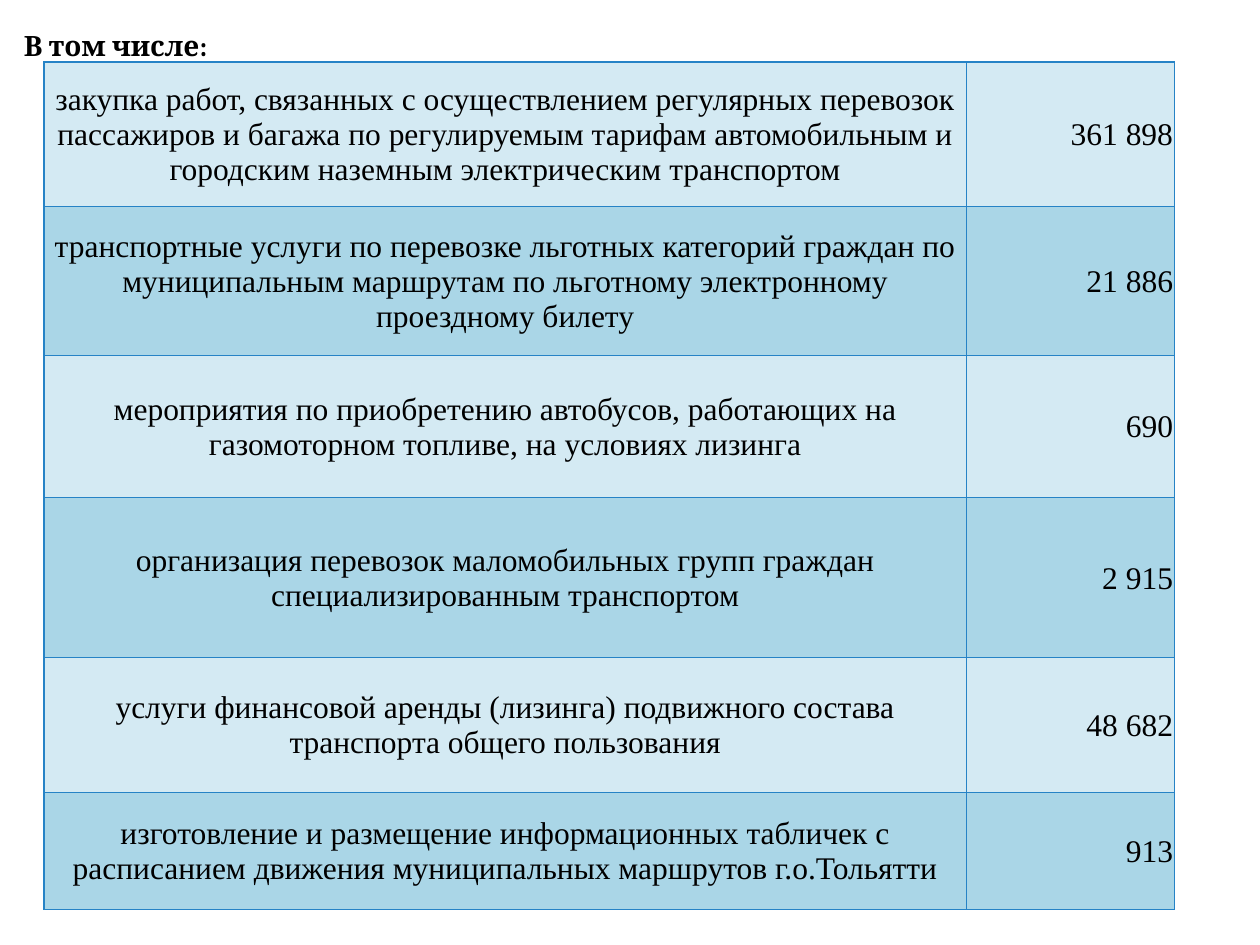
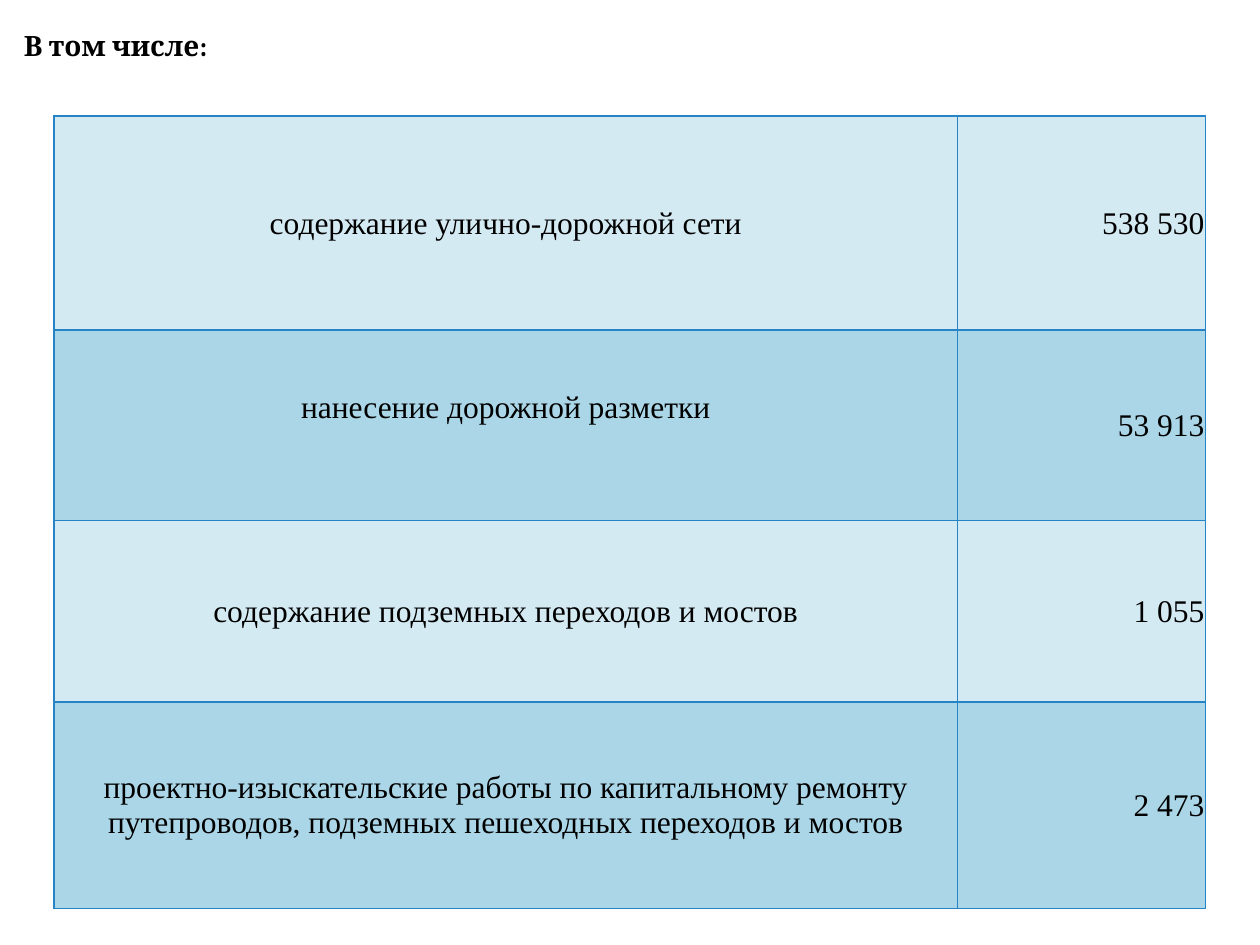
from lxml import etree
from pptx import Presentation
from pptx.dml.color import RGBColor
from pptx.enum import text
from pptx.oxml import ns
from pptx.util import Inches, Pt

BLACK = RGBColor(0x00, 0x00, 0x00)
BORDER = RGBColor(0x26, 0x83, 0xC6)
BANDS = (RGBColor(0xD4, 0xEA, 0xF3), RGBColor(0xAA, 0xD6, 0xE7))
HEADING = "В том числе:"
HEADING_FONT, BODY_FONT = "Cambria", "Times New Roman"
INSET = 0.01
ALIGNS = (text.PP_ALIGN.CENTER, text.PP_ALIGN.RIGHT)

# Each row: height, item, amount, extra space below the item
TABLES = [
    dict(left=0.35, top=0.49, cols=(7.32, 1.65), rows=[
        (1.15, "закупка работ, связанных с осуществлением регулярных перевозок "
               "пассажиров и багажа по регулируемым тарифам автомобильным и "
               "городским наземным электрическим транспортом", "361 898", 0),
        (1.18, "транспортные услуги по перевозке льготных категорий граждан по "
               "муниципальным маршрутам по льготному электронному "
               "проездному билету", "21 886", 0),
        (1.13, "мероприятия по приобретению автобусов, работающих на "
               "газомоторном топливе, на условиях лизинга", "690", 0),
        (1.27, "организация перевозок маломобильных групп граждан "
               "специализированным транспортом", "2 915", 0),
        (1.07, "услуги финансовой аренды (лизинга) подвижного состава "
               "транспорта общего пользования", "48 682", 0),
        (0.93, "изготовление и размещение информационных табличек с "
               "расписанием движения муниципальных маршрутов г.о.Тольятти",
         "913", 0),
    ]),
    dict(left=0.43, top=0.92, cols=(7.17, 1.97), rows=[
        (1.7, "содержание улично-дорожной сети", "538 530", 0),
        (1.51, "нанесение дорожной разметки", "53 913", 0.28),
        (1.44, "содержание подземных переходов и мостов", "1 055", 0),
        (1.64, "проектно-изыскательские работы по капитальному ремонту "
               "путепроводов, подземных пешеходных переходов и мостов",
         "2 473", 0),
    ]),
]


def add_text(p, words, font, size, bold=False):
    r = p.add_run()
    r.text = words
    r.font.name, r.font.size, r.font.bold = font, Pt(size), bold
    r.font.color.rgb = BLACK


def add_borders(cell):
    tc_pr = cell._tc.get_or_add_tcPr()
    for side in ("lnL", "lnR", "lnT", "lnB"):
        ln = etree.SubElement(tc_pr, ns.qn("a:" + side), w=str(Pt(1)))
        fill = etree.SubElement(ln, ns.qn("a:solidFill"))
        etree.SubElement(fill, ns.qn("a:srgbClr"), val=str(BORDER))


prs = Presentation()
prs.slide_width, prs.slide_height = Inches(10), Inches(7.5)

for spec_table in TABLES:
    slide = prs.slides.add_slide(prs.slide_layouts[6])

    heading = slide.shapes.add_textbox(0, Inches(0.21), prs.slide_width, Inches(0.55))
    tf = heading.text_frame
    tf.word_wrap = True
    tf.margin_left = Inches(0.19)
    tf.paragraphs[0].line_spacing = 0.9
    add_text(tf.paragraphs[0], HEADING, HEADING_FONT, 16, bold=True)

    cols, rows = spec_table["cols"], spec_table["rows"]
    table = slide.shapes.add_table(
        len(rows), len(cols), Inches(spec_table["left"]), Inches(spec_table["top"]),
        Inches(sum(cols)), Inches(sum(row[0] for row in rows))).table
    table.first_row = table.horz_banding = False
    for column, width in zip(table.columns, cols):
        column.width = Inches(width)

    for i, (height, item, amount, space_below) in enumerate(rows):
        table.rows[i].height = Inches(height)
        for j, words in enumerate((item, amount)):
            cell = table.cell(i, j)
            cell.margin_left = cell.margin_right = cell.margin_top = Inches(INSET)
            cell.margin_bottom = Inches(space_below if j == 0 else 0)
            cell.vertical_anchor = text.MSO_ANCHOR.MIDDLE
            add_borders(cell)
            cell.fill.solid()
            cell.fill.fore_color.rgb = BANDS[i % 2]
            p = cell.text_frame.paragraphs[0]
            p.alignment = ALIGNS[j]
            add_text(p, words, BODY_FONT, 18)

prs.save("out.pptx")
